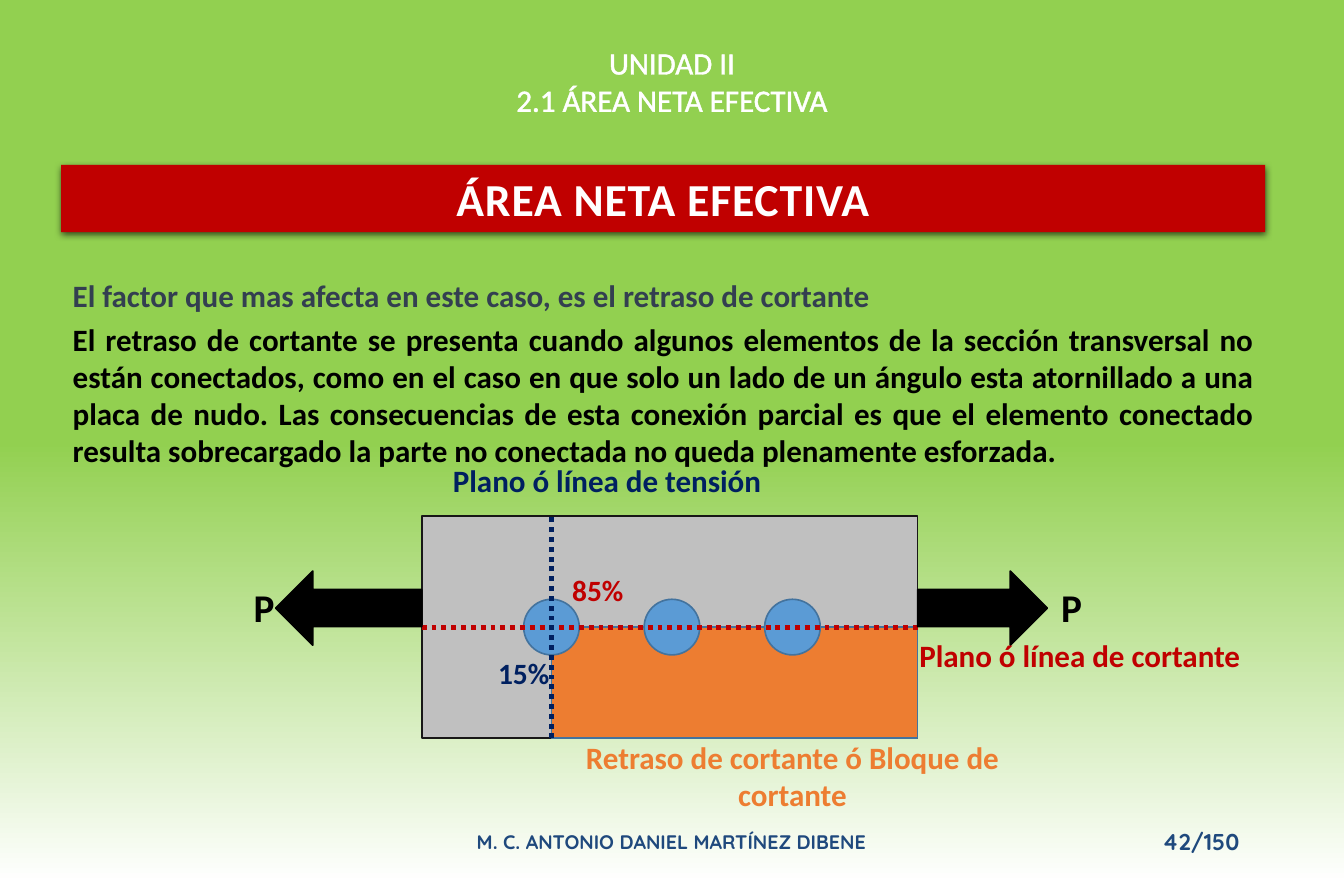
"""Build the slide on the effective net area and shear lag of a bolted plate."""
from copy import deepcopy
from dataclasses import dataclass

from lxml import etree
from pptx import Presentation
from pptx.dml.color import RGBColor
from pptx.enum import dml, shapes, text
from pptx.oxml import ns
from pptx.util import Cm, Pt

GREEN = RGBColor(0x92, 0xD0, 0x50)
WHITE = RGBColor(0xFF, 0xFF, 0xFF)
OFF_WHITE = RGBColor(0xFF, 0xFE, 0xFE)
BLACK = RGBColor(0x00, 0x00, 0x00)
RED = RGBColor(0xC0, 0x00, 0x00)
NAVY = RGBColor(0x00, 0x20, 0x60)
SLATE = RGBColor(0x33, 0x3F, 0x50)
ORANGE = RGBColor(0xED, 0x7D, 0x31)
SILVER = RGBColor(0xC0, 0xC0, 0xC0)
CHARCOAL = RGBColor(0x18, 0x17, 0x17)
BOLT_BLUE = RGBColor(0x5B, 0x9B, 0xD5)
EDGE_BLUE = RGBColor(0x43, 0x73, 0x9E)
FOOTER_BLUE = RGBColor(0x1F, 0x49, 0x7D)

Box = tuple[float, float, float, float]
SHAPE = shapes.MSO_SHAPE
ALIGN = text.PP_ALIGN
ANCHOR = text.MSO_ANCHOR

PLATE_LEFT, PLATE_TOP, PLATE_WIDTH, PLATE_HEIGHT = 9.1, 11.13, 10.7, 4.8
PLATE_RIGHT, PLATE_BOTTOM = PLATE_LEFT + PLATE_WIDTH, PLATE_TOP + PLATE_HEIGHT
SHEAR_Y = PLATE_TOP + PLATE_HEIGHT / 2
TENSION_X = 11.9
BOLT_SIZE, BOLT_PITCH, BOLT_COUNT = 1.2, 2.6, 3
FORCE_TOP, FORCE_HEIGHT = 12.32, 1.6
LABEL_WIDTH, LABEL_HEIGHT = 10.4, 1.22


@dataclass
class Part:
    kind: SHAPE
    box: Box
    fill: RGBColor
    edge: RGBColor | None


@dataclass
class Plane:
    start: tuple[float, float]
    end: tuple[float, float]
    color: RGBColor


@dataclass
class Label:
    words: str
    left: float
    top: float
    color: RGBColor
    size: float = 19


PARTS = [
    Part(SHAPE.RECTANGLE, (PLATE_LEFT, PLATE_TOP, PLATE_WIDTH, PLATE_HEIGHT), SILVER, CHARCOAL),
    Part(SHAPE.RECTANGLE, (TENSION_X, SHEAR_Y, PLATE_RIGHT - TENSION_X, PLATE_HEIGHT / 2),
         ORANGE, EDGE_BLUE),
    *(Part(SHAPE.OVAL, (TENSION_X + i * BOLT_PITCH - BOLT_SIZE / 2, SHEAR_Y - BOLT_SIZE / 2,
                        BOLT_SIZE, BOLT_SIZE), BOLT_BLUE, EDGE_BLUE)
      for i in range(BOLT_COUNT)),
]
FORCES = [
    Part(SHAPE.RIGHT_ARROW, (PLATE_RIGHT, FORCE_TOP, 2.8, FORCE_HEIGHT), BLACK, BLACK),
    Part(SHAPE.LEFT_ARROW, (5.95, FORCE_TOP, 3.15, FORCE_HEIGHT), BLACK, BLACK),
]
PLANES = [
    Plane((PLATE_LEFT, SHEAR_Y), (PLATE_RIGHT, SHEAR_Y), RED),
    Plane((TENSION_X, PLATE_BOTTOM), (TENSION_X, PLATE_TOP), NAVY),
]
LABELS = [
    Label("Plano ó línea de tensión", 7.9, 9.74, NAVY),
    Label("Plano ó línea de cortante", 18.1, 13.53, RED),
    Label("Retraso de cortante ó Bloque de cortante", 11.9, 16.12, ORANGE),
    Label("P", 17.92, 12.48, BLACK, 24),
    Label("P", 0.5, 12.48, BLACK, 24),
    Label("15%", 6.1, 13.91, NAVY, 18),
    Label("85%", 7.7, 12.11, RED, 18),
]


def cm(box: Box) -> list[Cm]:
    return [Cm(length) for length in box]


def write(frame, words: str, *, color: RGBColor, size: float = 19, bold: bool = True,
          font: str = "Calibri", align=ALIGN.CENTER, anchor=ANCHOR.MIDDLE,
          wrap: bool = True) -> None:
    frame.word_wrap = wrap
    frame.auto_size = text.MSO_AUTO_SIZE.NONE
    frame.vertical_anchor = anchor
    frame.text = words
    for paragraph in frame.paragraphs:
        paragraph.alignment = align
        for run in paragraph.runs:
            run.font.name, run.font.size, run.font.bold = font, Pt(size), bold
            run.font.color.rgb = color


def add_text(slide, words: str, box: Box, **style) -> None:
    write(slide.shapes.add_textbox(*cm(box)).text_frame, words, **style)


def add_part(slide, part: Part):
    shape = slide.shapes.add_shape(part.kind, *cm(part.box))
    shape.shadow.inherit = False
    shape.fill.solid()
    shape.fill.fore_color.rgb = part.fill
    if part.edge is None:
        shape.line.fill.background()
    else:
        shape.line.color.rgb = part.edge
        shape.line.width = Pt(1)
    return shape


def add_plane(slide, plane: Plane) -> None:
    line = slide.shapes.add_connector(shapes.MSO_CONNECTOR.STRAIGHT, *cm(plane.start + plane.end))
    line.line.color.rgb = plane.color
    line.line.width = Pt(3)
    line.line.dash_style = dml.MSO_LINE.ROUND_DOT
    etree.SubElement(line._element.spPr, ns.qn("a:effectLst"))


def paint_background(slide) -> None:
    fill = slide.background.fill
    fill.gradient()
    fill.gradient_angle = 270
    for stop, position, color in zip(fill.gradient_stops, (0.5, 1), (GREEN, WHITE)):
        stop.position = position
        stop.color.rgb = color
    stops = next(slide._element.iter(ns.qn("a:gsLst")))
    first = deepcopy(stops[0])
    first.set("pos", "0")
    stops.insert(0, first)


def add_title(slide) -> None:
    title = slide.shapes.title
    title.left, title.top, title.width, title.height = cm((4.8, 0.81, 19.4, 1.88))
    write(title.text_frame, "UNIDAD II\n2.1 ÁREA NETA EFECTIVA", color=WHITE, bold=False,
          anchor=ANCHOR.TOP)
    for paragraph in title.text_frame.paragraphs:
        for run in paragraph.runs:
            outline = etree.Element(ns.qn("a:ln"), w=str(Pt(1.45)))
            fill = etree.SubElement(outline, ns.qn("a:solidFill"))
            etree.SubElement(fill, ns.qn("a:srgbClr"), val=str(WHITE))
            run.font._element.insert(0, outline)


def add_banner(slide) -> None:
    banner = add_part(slide, Part(SHAPE.RECTANGLE, (1.32, 3.56, 25.98, 1.45), RED, None))
    write(banner.text_frame, "ÁREA NETA EFECTIVA", color=OFF_WHITE, size=28)
    banner.text_frame.paragraphs[0].runs[0].font._element.set("spc", "50")
    effects = banner._element.spPr.find(ns.qn("a:effectLst"))
    shadow = etree.SubElement(effects, ns.qn("a:outerShdw"), blurRad=str(Pt(4.5)),
                              dist=str(Pt(1.5)), dir="5400000", rotWithShape="0")
    shade = etree.SubElement(shadow, ns.qn("a:srgbClr"), val=str(BLACK))
    etree.SubElement(shade, ns.qn("a:alpha"), val="63000")


def main() -> None:
    deck = Presentation()
    deck.slide_width, deck.slide_height = Cm(29), Cm(19.05)
    slide = deck.slides.add_slide(deck.slide_layouts[5])
    paint_background(slide)
    add_title(slide)
    add_banner(slide)
    add_text(slide, "El factor que mas afecta en este caso, es el retraso de cortante",
             (1.32, 5.84, 17.96, 1.07), color=SLATE, align=ALIGN.LEFT, anchor=ANCHOR.TOP, wrap=False)
    add_text(slide, "El retraso de cortante se presenta cuando algunos elementos de la sección "
             "transversal no están conectados, como en el caso en que solo un lado de un ángulo "
             "esta atornillado a una placa de nudo. Las consecuencias de esta conexión parcial es "
             "que el elemento conectado resulta sobrecargado la parte no conectada no queda "
             "plenamente esforzada.",
             (1.32, 6.78, 25.98, 3.5), color=BLACK, align=ALIGN.JUSTIFY, anchor=ANCHOR.TOP)
    for part in PARTS:
        add_part(slide, part)
    for plane in PLANES:
        add_plane(slide, plane)
    for force in FORCES:
        add_part(slide, force)
    for label in LABELS:
        add_text(slide, label.words, (label.left, label.top, LABEL_WIDTH, LABEL_HEIGHT),
                 color=label.color, size=label.size)
    add_text(slide, "M. C. ANTONIO DANIEL MARTÍNEZ DIBENE", (9.6, 17.65, 9.78, 1.02),
             color=FOOTER_BLUE, size=12, font="Quicksand")
    add_text(slide, "42/150", (20.47, 17.65, 6.53, 1.02), color=FOOTER_BLUE, size=14,
             font="Quicksand", align=ALIGN.RIGHT)
    deck.save("out.pptx")


if __name__ == "__main__":
    main()
